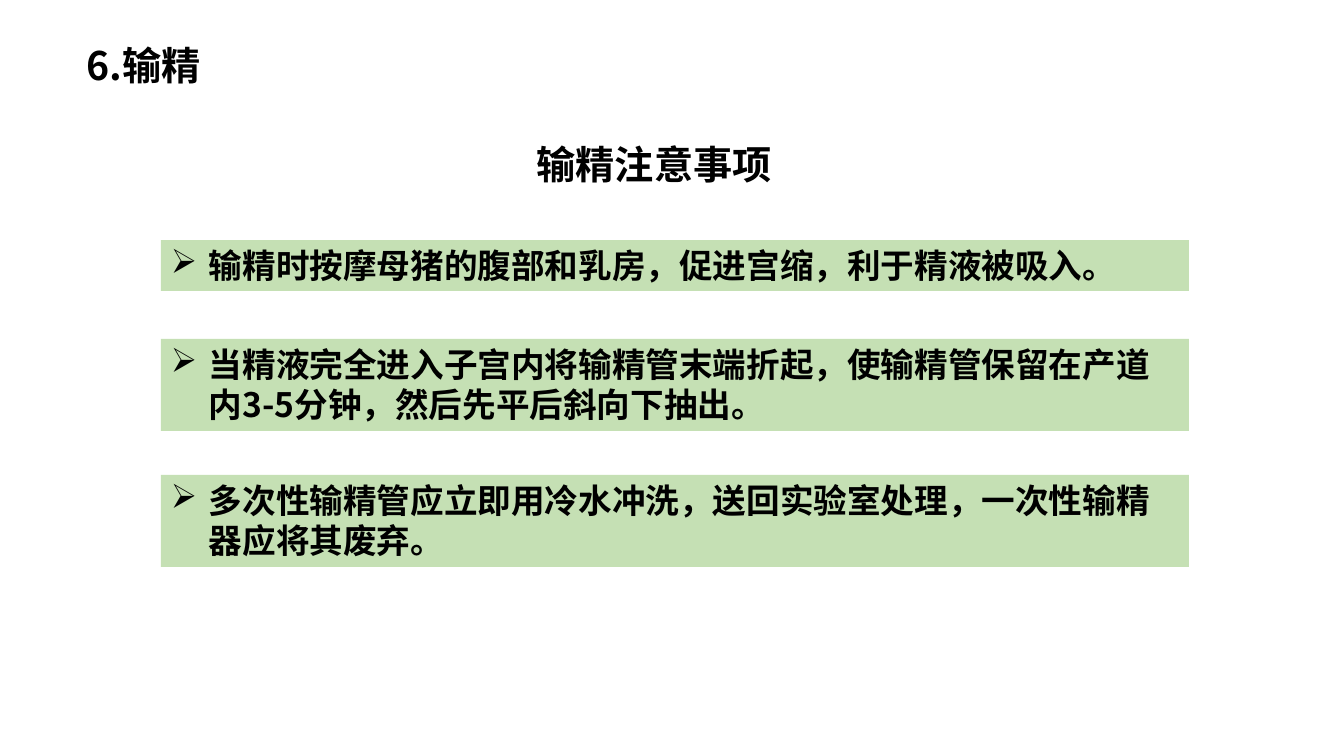
from dataclasses import dataclass

from lxml import etree
from pptx import Presentation
from pptx.dml.color import RGBColor
from pptx.enum.shapes import MSO_SHAPE
from pptx.enum.text import MSO_ANCHOR, PP_ALIGN
from pptx.oxml.ns import qn
from pptx.util import Emu, Pt

RECTANGLE = MSO_SHAPE.RECTANGLE
MIDDLE, TOP = MSO_ANCHOR.MIDDLE, MSO_ANCHOR.TOP
LEFT, CENTER = PP_ALIGN.LEFT, PP_ALIGN.CENTER


@dataclass(frozen=True)
class Theme:
    font: str = "Noto Sans CJK SC"
    ink: RGBColor = RGBColor(0x00, 0x00, 0x00)
    band: RGBColor = RGBColor(0xC5, 0xE0, 0xB4)
    heading_size: int = 28
    note_size: int = 24


THEME = Theme()

NOTES = [
    # top, height, text
    (240, 51, "输精时按摩母猪的腹部和乳房，促进宫缩，利于精液被吸入。"),
    (339, 92, "当精液完全进入子宫内将输精管末端折起，使输精管保留在产道内3-5分钟，然后先平后斜向下抽出。"),
    (475, 92, "多次性输精管应立即用冷水冲洗，送回实验室处理，一次性输精器应将其废弃。"),
]


def px(n):
    return Emu(round(n * 914400 / 100.8))


def write(tf, text, size, align):
    """Fill a text frame with one bold paragraph."""
    tf.text = text
    p = tf.paragraphs[0]
    p.alignment = align
    font = p.runs[0].font
    font.size, font.bold, font.name = Pt(size), True, THEME.font
    font.color.rgb = THEME.ink
    east_asian = etree.SubElement(font._element, qn("a:ea"))
    east_asian.set("typeface", THEME.font)
    return p


def add_arrow_bullet(p, indent):
    pPr = p._p.get_or_add_pPr()
    pPr.set("marL", str(px(indent)))
    pPr.set("indent", str(-px(indent)))
    etree.SubElement(pPr, qn("a:buFont")).set("typeface", "Wingdings")
    etree.SubElement(pPr, qn("a:buChar")).set("char", "Ø")


def add_heading(slide, box, text, align, anchor, wrap):
    tf = slide.shapes.add_textbox(*map(px, box)).text_frame
    tf.word_wrap = wrap
    tf.vertical_anchor = anchor
    return write(tf, text, THEME.heading_size, align)


def add_note(slide, box, text):
    s = slide.shapes.add_shape(RECTANGLE, *map(px, box))
    s.shadow.inherit = False
    s.fill.solid()
    s.fill.fore_color.rgb = THEME.band
    s.line.fill.background()
    tf = s.text_frame
    tf.word_wrap = True
    tf.vertical_anchor = TOP
    p = write(tf, text, THEME.note_size, LEFT)
    add_arrow_bullet(p, 38)


def build_notes_slide(prs):
    slide = prs.slides.add_slide(prs.slide_layouts[6])

    # Section title and subtitle
    title = add_heading(slide, (77, 39, 302, 58), "6.输精", LEFT, MIDDLE, True)
    title.line_spacing = 0.9
    add_heading(slide, (525, 135, 258, 57), "输精注意事项", CENTER, TOP, False)

    # Green bands with the precautions
    for top, height, text in NOTES:
        add_note(slide, (161, top, 1028, height), text)


def main():
    prs = Presentation()
    prs.slide_width, prs.slide_height = px(1344), px(756)
    build_notes_slide(prs)
    prs.save("out.pptx")


if __name__ == "__main__":
    main()
